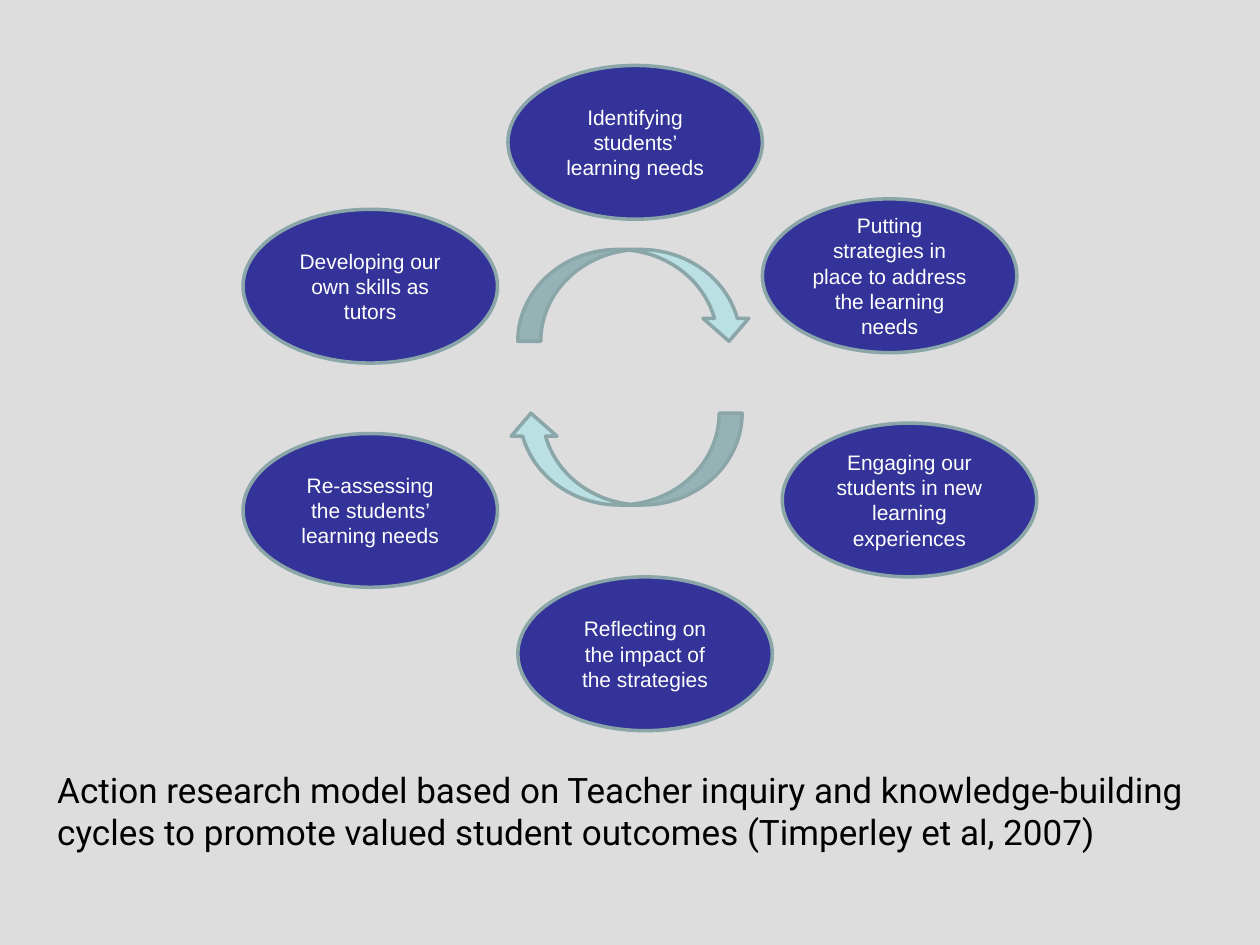
"""Build the action research cycle slide."""
from pptx import Presentation
from pptx.dml.color import RGBColor
from pptx.enum.shapes import MSO_SHAPE
from pptx.enum.text import MSO_ANCHOR, MSO_AUTO_SIZE, PP_ALIGN
from pptx.util import Cm, Pt

COLORS = {"background": "DDDDDD", "step": "333399", "arrow": "BBE0E3",
          "outline": "8AA6A8", "step_text": "FFFFFF", "title": "000000"}
STEP_W, STEP_H = 5.13, 3.1
ARROW_W, ARROW_H = 4.72, 1.85
STEPS = [
    (10.24, 1.32, "Identifying students’ learning needs"),
    (15.37, 4.01, "Putting strategies in place to address the learning needs"),
    (15.77, 8.53, "Engaging our students in new learning experiences"),
    (10.44, 11.63, "Reflecting on the impact of the strategies"),
    (4.9, 8.74, "Re-assessing the students’ learning needs"),
    (4.9, 4.22, "Developing our own skills as tutors"),
]
ARROWS = [(10.44, 5.03, 0), (10.24, 8.33, 180)]


def add_outlined(kind, x, y, w, h, fill):
    s = slide.shapes.add_shape(kind, Cm(x), Cm(y), Cm(w), Cm(h))
    s.shadow.inherit = False
    s.fill.solid()
    s.fill.fore_color.rgb = RGBColor.from_string(COLORS[fill])
    s.line.color.rgb = RGBColor.from_string(COLORS["outline"])
    s.line.width = Pt(2)
    return s


def set_text(tf, text, font, size, color, align, anchor):
    tf.word_wrap = True
    tf.auto_size = MSO_AUTO_SIZE.NONE
    tf.vertical_anchor = anchor
    p = tf.paragraphs[0]
    p.text = text
    p.alignment = align
    p.font.name = font
    p.font.size = Pt(size)
    p.font.color.rgb = RGBColor.from_string(COLORS[color])


prs = Presentation()
prs.slide_width, prs.slide_height = Cm(25.4), Cm(19.05)
slide = prs.slides.add_slide(prs.slide_layouts[5])
slide.background.fill.solid()
slide.background.fill.fore_color.rgb = RGBColor.from_string(COLORS["background"])

for x, y, text in STEPS:
    s = add_outlined(MSO_SHAPE.OVAL, x, y, STEP_W, STEP_H, "step")
    set_text(s.text_frame, text, "Arial", 12, "step_text",
             PP_ALIGN.CENTER, MSO_ANCHOR.MIDDLE)

for x, y, rotation in ARROWS:
    s = add_outlined(MSO_SHAPE.CURVED_DOWN_ARROW, x, y, ARROW_W, ARROW_H, "arrow")
    s.rotation = rotation

title = slide.shapes.title
title.left, title.top, title.width, title.height = Cm(0.9), Cm(15.37), Cm(23.6), Cm(2.7)
set_text(title.text_frame,
         "Action research model based on Teacher inquiry and knowledge-building "
         "cycles to promote valued student outcomes (Timperley et al, 2007)",
         "Roboto", 20, "title", PP_ALIGN.LEFT, MSO_ANCHOR.TOP)

prs.save("out.pptx")
